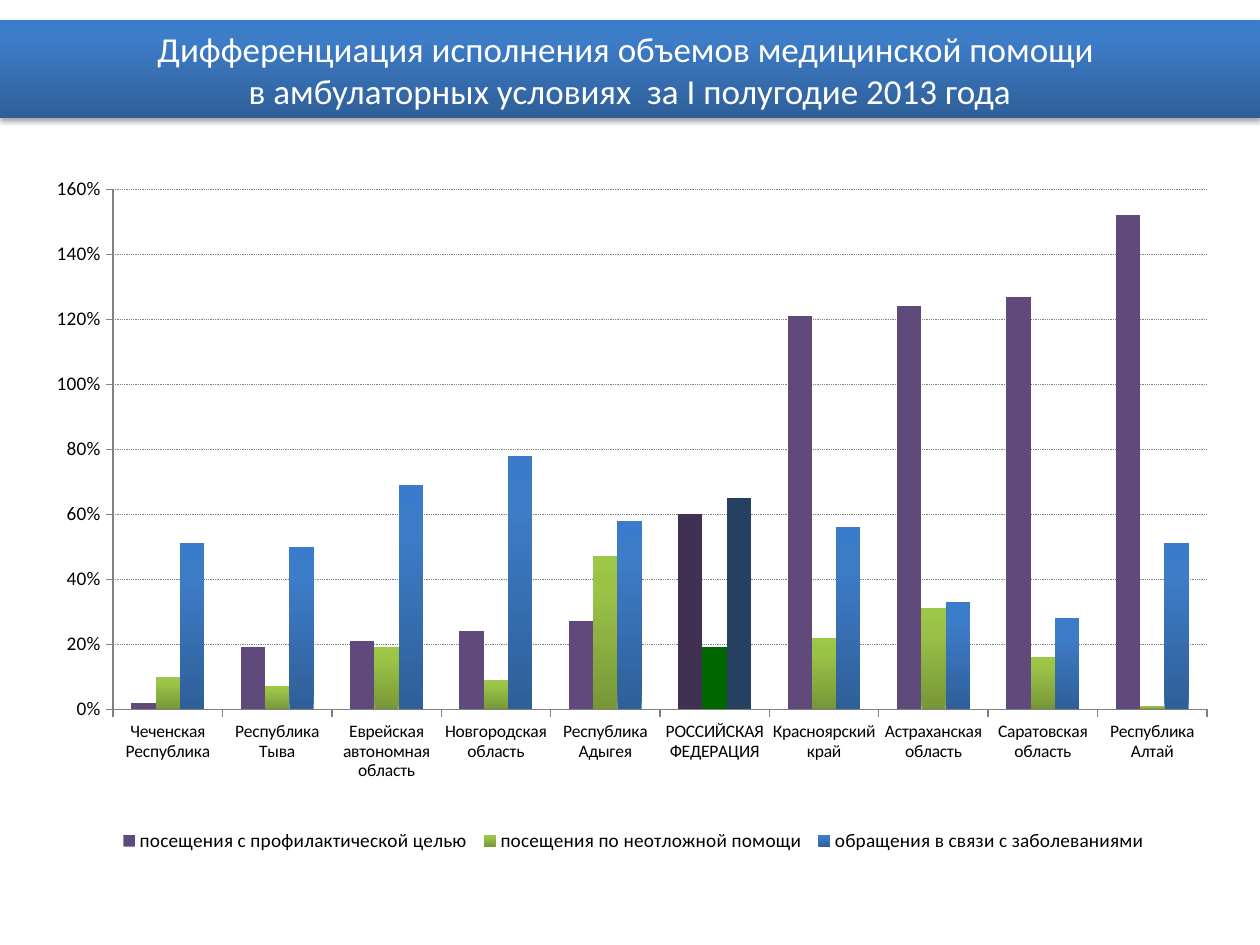
import copy

import lxml.etree
import pptx
import pptx.chart.data
import pptx.dml.color
import pptx.enum.chart
import pptx.enum.dml
import pptx.enum.shapes
import pptx.enum.text
import pptx.oxml
import pptx.oxml.ns
import pptx.util

Inches, Pt = pptx.util.Inches, pptx.util.Pt
qn = pptx.oxml.ns.qn

BLUE = [(0, "2F5F99"), (0.8, "3D7CC7"), (1, "3A7CCB")]
GREEN = [(0, "779737"), (0.8, "9BC348"), (1, "9DC746")]
REGIONS = [
    "Чеченская Республика", "Республика Тыва", "Еврейская автономная область",
    "Новгородская область", "Республика Адыгея", "РОССИЙСКАЯ ФЕДЕРАЦИЯ",
    "Красноярский край", "Астраханская область", "Саратовская область",
    "Республика Алтай",
]
COUNTRY = REGIONS.index("РОССИЙСКАЯ ФЕДЕРАЦИЯ")
SERIES = [
    ("посещения с профилактической целью", "604A7B", "403152",
     (0.02, 0.19, 0.21, 0.24, 0.27, 0.6, 1.21, 1.24, 1.27, 1.52)),
    ("посещения по неотложной помощи", GREEN, "006600",
     (0.1, 0.07, 0.19, 0.09, 0.47, 0.19, 0.22, 0.31, 0.16, 0.01)),
    ("обращения в связи с заболеваниями ", BLUE, "254061",
     (0.51, 0.5, 0.69, 0.78, 0.58, 0.65, 0.56, 0.33, 0.28, 0.51)),
]


def rgb(value):
    return pptx.dml.color.RGBColor.from_string(value)


class Deck:
    """Holds the style and the current slide, and draws its elements."""

    font = "Calibri"

    def __init__(self, width, height):
        self.prs = pptx.Presentation()
        self.prs.slide_width, self.prs.slide_height = Inches(width), Inches(height)
        self.slide = self.prs.slides.add_slide(self.prs.slide_layouts[6])

    def style(self, font, size, color):
        font.name, font.size, font.color.rgb = self.font, Pt(size), rgb(color)

    def paint(self, fill, color, element):
        if isinstance(color, str):
            fill.solid()
            fill.fore_color.rgb = rgb(color)
            return
        fill.gradient()
        fill.gradient_angle = 90
        stops = element.xpath(".//a:gradFill/a:gsLst")[0]
        while len(stops) < len(color):
            stops.append(copy.deepcopy(stops[0]))
        for stop, (position, value) in zip(fill.gradient_stops, color):
            stop.position, stop.color.rgb = position, rgb(value)

    def place(self, parent, index, target, **box):
        for old in parent.findall(qn("c:layout")):
            parent.remove(old)
        layout = lxml.etree.Element(qn("c:layout"))
        manual = lxml.etree.SubElement(layout, qn("c:manualLayout"))
        values = {"xMode": "edge", "yMode": "edge", **box}
        if target:
            values = {"layoutTarget": target, **values}
        for name, value in values.items():
            lxml.etree.SubElement(manual, qn("c:" + name)).set("val", str(value))
        parent.insert(index, layout)

    def banner(self, text, left, top, width, height):
        sp = self.slide.shapes.add_shape(
            pptx.enum.shapes.MSO_SHAPE.RECTANGLE,
            Inches(left), Inches(top), Inches(width), Inches(height))
        self.paint(sp.fill, BLUE, sp._element)
        sp.line.fill.background()
        sp.shadow.inherit = False
        effects = sp._element.spPr.find(qn("a:effectLst"))
        shadow = lxml.etree.SubElement(
            effects, qn("a:outerShdw"), blurRad=str(Pt(3.1)), dist=str(Pt(1.8)),
            dir="5400000", rotWithShape="0")
        black = lxml.etree.SubElement(shadow, qn("a:srgbClr"), val="000000")
        lxml.etree.SubElement(black, qn("a:alpha"), val="35000")
        tf = sp.text_frame
        tf.word_wrap = True
        tf.vertical_anchor = pptx.enum.text.MSO_ANCHOR.MIDDLE
        p = tf.paragraphs[0]
        p.text = text
        p.alignment = pptx.enum.text.PP_ALIGN.CENTER
        self.style(p.font, 20, "FFFFFF")

    def axis(self, axis, size):
        axis.major_tick_mark = pptx.enum.chart.XL_TICK_MARK.OUTSIDE
        axis.minor_tick_mark = pptx.enum.chart.XL_TICK_MARK.NONE
        axis.format.line.color.rgb = rgb("808080")
        axis.format.line.width = Pt(0.75)
        self.style(axis.tick_labels.font, size, "000000")

    def column_chart(self, left, top, width, height):
        data = pptx.chart.data.CategoryChartData(number_format="0%")
        data.categories = REGIONS
        for name, _, _, values in SERIES:
            data.add_series(name, values)
        chart = self.slide.shapes.add_chart(
            pptx.enum.chart.XL_CHART_TYPE.COLUMN_CLUSTERED,
            Inches(left), Inches(top), Inches(width), Inches(height), data).chart
        self.style(chart.font, 18, "000000")
        chart.has_title = False

        plot = chart.plots[0]
        plot.gap_width, plot.overlap, plot.vary_by_categories = 150, 0, False
        for series, (_, color, accent, _) in zip(plot.series, SERIES):
            self.paint(series.format.fill, color, series._element)
            self.paint(series.points[COUNTRY].format.fill, accent, None)
            series.invert_if_negative = False

        self.axis(chart.category_axis, 10)
        value_axis = chart.value_axis
        self.axis(value_axis, 11)
        value_axis.minimum_scale, value_axis.maximum_scale = 0, 1.6
        value_axis.major_unit = 0.2
        value_axis.tick_labels.number_format = "0%"
        value_axis.tick_labels.number_format_is_linked = False
        value_axis.has_major_gridlines = True
        line = value_axis.major_gridlines.format.line
        line.color.rgb, line.width = rgb("808080"), Pt(0.5)
        line.dash_style = pptx.enum.dml.MSO_LINE.ROUND_DOT

        chart.has_legend = True
        legend = chart.legend
        legend.position = pptx.enum.chart.XL_LEGEND_POSITION.RIGHT
        legend.include_in_layout = False
        self.style(legend.font, 11, "000000")
        self.place(legend._element, 1, None, x=0.07, y=0.89, w=0.87, h=0.06)
        plot_area = chart._chartSpace.chart.plotArea
        self.place(plot_area, 0, "inner", x=0.07, y=0.03, w=0.91, h=0.71)


def main():
    deck = Deck(10, 7.5)
    deck.column_chart(0.23, 1.33, 9.54, 5.81)
    deck.banner("Дифференциация исполнения объемов медицинской помощи \n"
                "в амбулаторных условиях  за I полугодие 2013 года",
                0, 0.16, 10, 0.78)
    deck.prs.save("out.pptx")


if __name__ == "__main__":
    main()
